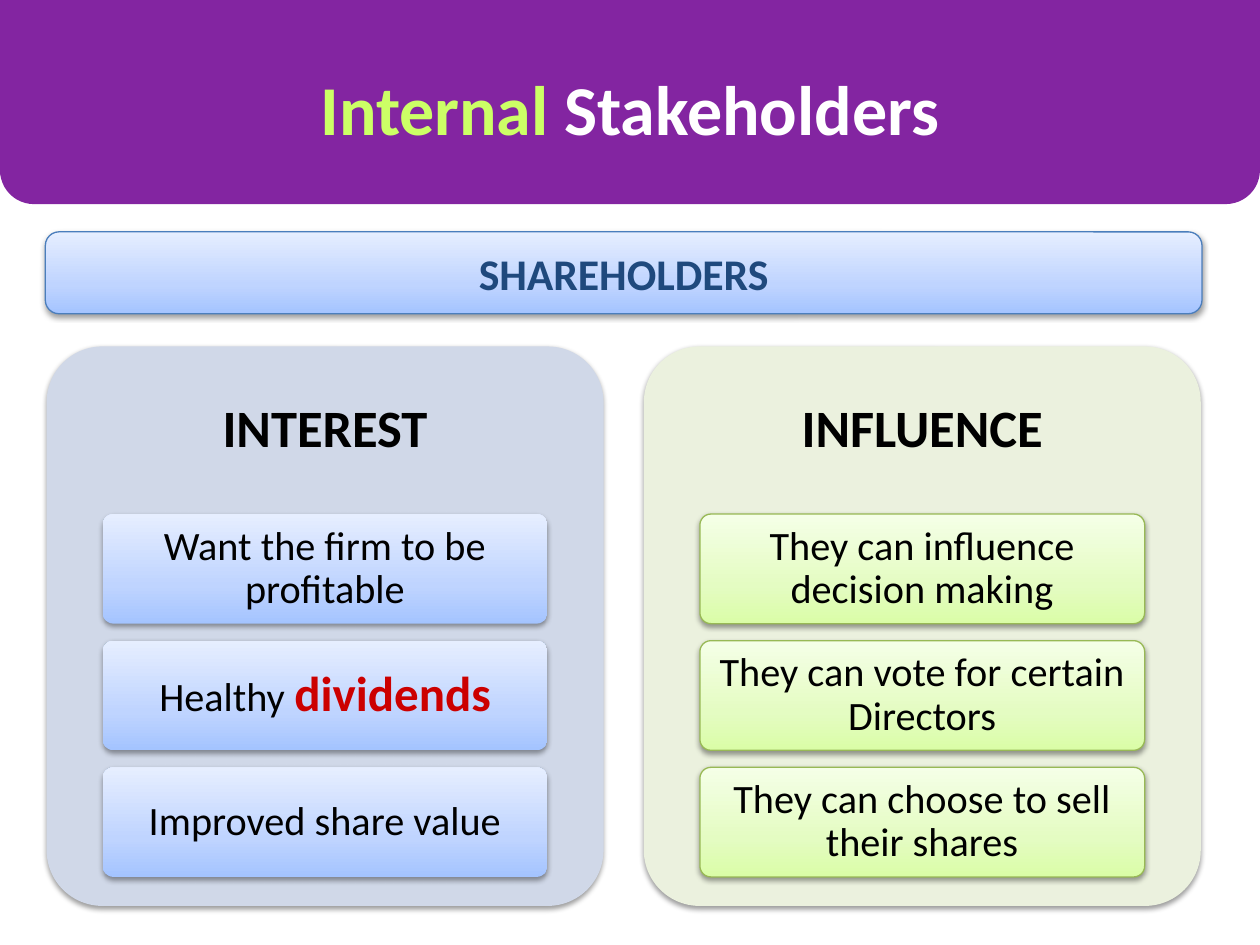
"""Build the shareholders slide: a title banner, a bar and two panels of cards."""
from copy import deepcopy
from dataclasses import dataclass

from lxml.etree import SubElement
from pptx import Presentation
from pptx.dml.color import RGBColor
from pptx.enum.shapes import MSO_SHAPE
from pptx.enum.text import MSO_ANCHOR, PP_ALIGN
from pptx.oxml.ns import qn
from pptx.util import Inches, Pt

BLUE = ("A4C4FF", "BFD4FF", "E6EEFF")
GREEN = ("DAFDA7", "E4FCC2", "F5FFE7")
STOPS = (0, 0.35, 1)
PURPLE = "8325A1"
PANEL_TOP, PANEL_WIDTH, PANEL_HEIGHT, HEADING_HEIGHT = 2.75, 4.42, 4.44, 1.33
CARD_INDENT, CARD_WIDTH, CARD_HEIGHT, CARD_PITCH = 0.445, 3.53, 0.87, 1.005


@dataclass
class Span:
    text: str
    size: float = 23
    color: str = "000000"
    bold: bool = False


@dataclass
class Panel:
    left: float
    heading: str
    fill: str
    card_fill: tuple[str, ...]
    card_line: str | None
    cards: list[list[Span]]


PANELS = [
    Panel(0.37, "INTEREST", "D0D8E8", BLUE, None, [
        [Span("Want the firm to be profitable")],
        [Span("Healthy "), Span("dividends", 28, "CC0000", True)],
        [Span("Improved share value")],
    ]),
    Panel(5.11, "INFLUENCE", "EBF1DE", GREEN, "98B955", [
        [Span("They can influence decision making")],
        [Span("They can vote for certain Directors")],
        [Span("They can choose to sell their shares")],
    ]),
]


def rgb(color: str) -> RGBColor:
    return RGBColor.from_string(color)


def write(box, spans: list[Span], margins=(0.1, 0.05), anchor=MSO_ANCHOR.MIDDLE, spacing=1.0) -> None:
    frame = box.text_frame
    across, down = (Inches(margin) for margin in margins)
    layout = {"word_wrap": True, "vertical_anchor": anchor, "margin_left": across,
              "margin_right": across, "margin_top": down, "margin_bottom": down}
    for name, value in layout.items():
        setattr(frame, name, value)
    para = frame.paragraphs[0]
    para.alignment = PP_ALIGN.CENTER
    para.line_spacing = spacing
    for span in spans:
        run = para.add_run()
        run.text = span.text
        for name, value in {"name": "Calibri", "size": Pt(span.size), "bold": span.bold}.items():
            setattr(run.font, name, value)
        run.font.color.rgb = rgb(span.color)


def fill_gradient(shape, colors: tuple[str, ...]) -> None:
    shape.fill.gradient()
    shape.fill.gradient_angle = 90
    stop_list = shape._element.spPr.find(qn("a:gradFill")).find(qn("a:gsLst"))
    stop_list.append(deepcopy(stop_list[-1]))
    for stop, position, color in zip(shape.fill.gradient_stops, STOPS, colors):
        stop.position = position
        stop.color.rgb = rgb(color)


def add_shadow(shape) -> None:
    effects = shape._element.spPr.find(qn("a:effectLst"))
    shadow = SubElement(effects, qn("a:outerShdw"), blurRad=str(Pt(3.1)), dist=str(Pt(1.6)),
                        dir="5400000", rotWithShape="0")
    color = SubElement(shadow, qn("a:srgbClr"), val="000000")
    SubElement(color, qn("a:alpha"), val="38000")


def add_block(page, at, fill, line: str | None = None, corner: float = 0.1, shadow: bool = True):
    kind = MSO_SHAPE.ROUNDED_RECTANGLE if corner else MSO_SHAPE.RECTANGLE
    shape = page.shapes.add_shape(kind, *map(Inches, at))
    if corner:
        shape.adjustments[0] = corner
    shape.shadow.inherit = False
    if shadow:
        add_shadow(shape)
    if isinstance(fill, tuple):
        fill_gradient(shape, fill)
    else:
        shape.fill.solid()
        shape.fill.fore_color.rgb = rgb(fill)
    if line:
        shape.line.color.rgb = rgb(line)
        shape.line.width = Pt(0.75)
    else:
        shape.line.fill.background()
    return shape


def add_title(page) -> None:
    add_block(page, (0, 0, 10, 1.62), PURPLE, corner=0.167, shadow=False)
    add_block(page, (0, 0, 10, 1.15), PURPLE, corner=0, shadow=False)
    title = page.shapes.title
    place = {"left": 0, "top": 0.47, "width": 10, "height": 0.77}
    for name, value in place.items():
        setattr(title, name, Inches(value))
    write(title, [Span("Internal", 40, "CCFF66", True), Span(" Stakeholders", 40, "FFFFFF", True)],
          anchor=MSO_ANCHOR.TOP)
    page.shapes._spTree.append(title._element)


def add_panel(page, panel: Panel) -> None:
    add_block(page, (panel.left, PANEL_TOP, PANEL_WIDTH, PANEL_HEIGHT), panel.fill)
    heading = page.shapes.add_textbox(
        *map(Inches, (panel.left, PANEL_TOP, PANEL_WIDTH, HEADING_HEIGHT)))
    write(heading, [Span(panel.heading, 30, bold=True)], (0.12, 0.12), spacing=0.9)
    for row, spans in enumerate(panel.cards):
        top = PANEL_TOP + HEADING_HEIGHT + row * CARD_PITCH
        card = add_block(page, (panel.left + CARD_INDENT, top, CARD_WIDTH, CARD_HEIGHT),
                         panel.card_fill, panel.card_line)
        write(card, spans, (0.06, 0.05), spacing=0.9)


def main() -> None:
    deck = Presentation()
    deck.slide_width, deck.slide_height = Inches(10), Inches(7.5)
    page = deck.slides.add_slide(deck.slide_layouts[5])
    bar = add_block(page, (0.36, 1.84, 9.18, 0.65), BLUE, "4B7EBC", corner=0.167)
    write(bar, [Span("SHAREHOLDERS", 25, "1F497D", True)])
    add_title(page)
    for panel in PANELS:
        add_panel(page, panel)
    deck.save("out.pptx")


if __name__ == "__main__":
    main()
